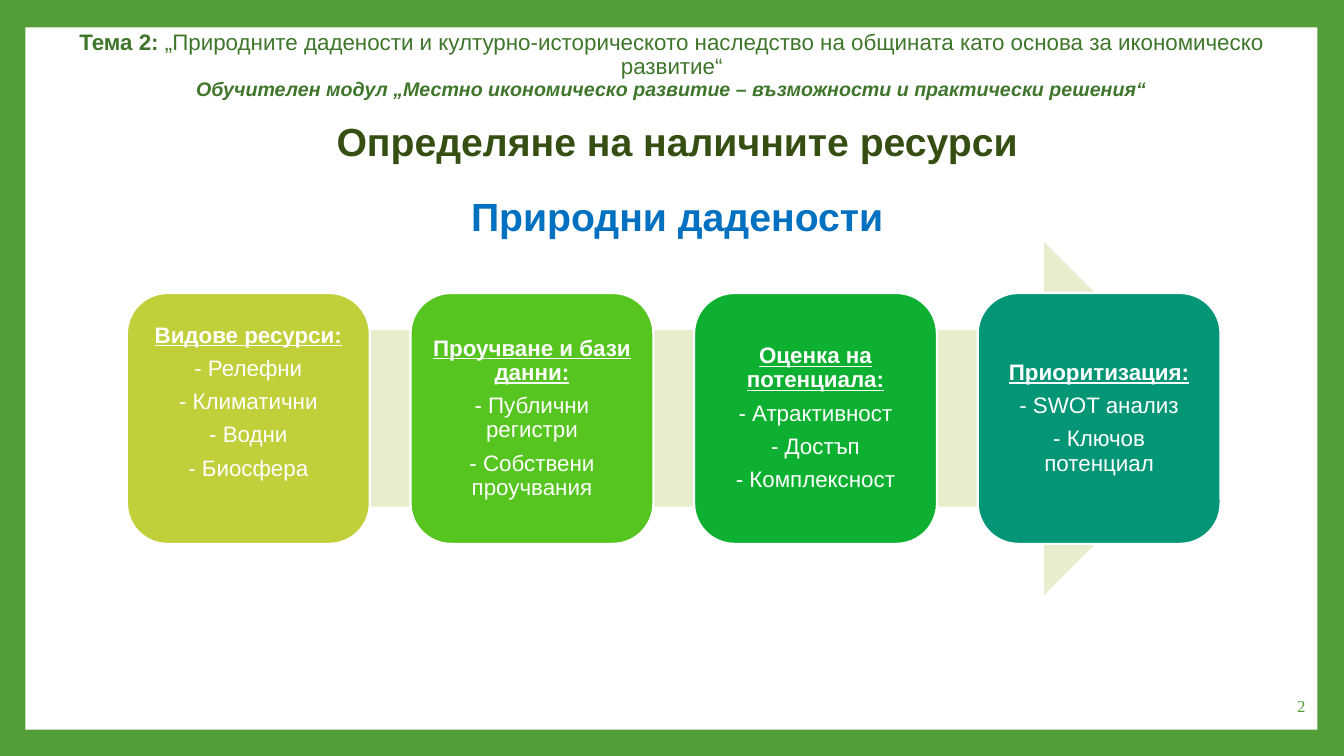
from dataclasses import dataclass
from lxml.etree import SubElement
from pptx import Presentation
from pptx.dml.color import RGBColor
from pptx.enum.shapes import MSO_SHAPE as Shape
from pptx.enum.text import MSO_ANCHOR as Anchor, MSO_AUTO_SIZE as AutoSize, PP_ALIGN as Align
from pptx.oxml.ns import qn
from pptx.util import Cm, Pt


@dataclass(frozen=True)
class Theme:
    frame: str = "549E39"
    paper: str = "FFFFFF"
    arrow: str = "E8EDCE"
    topic: str = "3F762B"
    heading: str = "354F12"
    subheading: str = "0070C0"
    stages: tuple = ("C0CF3A", "57C51F", "0EB032", "029676")
    font: str = "Arial"
    number_font: str = "Times New Roman"
    heading_size: int = 28
    text_size: int = 16
    module_size: int = 14
    number_size: int = 12


THEME = Theme()

STAGES = [
    ("Видове ресурси:", ["Релефни", "Климатични", "Водни", "Биосфера"]),
    ("Проучване и бази данни:", ["Публични регистри", "Собствени проучвания"]),
    ("Оценка на потенциала:", ["Атрактивност", "Достъп", "Комплексност"]),
    ("Приоритизация:", ["SWOT анализ", "Ключов потенциал"]),
]


def apply_format(target, **values):
    for name, value in values.items():
        setattr(target, name, value)


def place(part, box):
    lengths = map(Cm, box)
    apply_format(part, **dict(zip(("left", "top", "width", "height"), lengths)))


def add_run(paragraph, text, color, size, name=THEME.font, **style):
    run = paragraph.add_run()
    run.text = text
    apply_format(run.font, name=name, size=Pt(size), **style)
    run.font.color.rgb = RGBColor.from_string(color)


def next_paragraph(frame, **layout):
    """Return the unused first paragraph of a frame, or a new one."""
    first = frame.paragraphs[0]
    paragraph = first if not first.runs else frame.add_paragraph()
    apply_format(paragraph, **layout)
    return paragraph


def add_filled(slide, kind, box, color):
    shape = slide.shapes.add_shape(kind, *map(Cm, box))
    shape.shadow.inherit = False
    shape.fill.solid()
    shape.fill.fore_color.rgb = RGBColor.from_string(color)
    shape.line.fill.background()
    return shape


def add_backdrop(slide, box):
    """Green page with a white panel behind everything else."""
    fill = slide.background.fill
    fill.solid()
    fill.fore_color.rgb = RGBColor.from_string(THEME.frame)
    panel = add_filled(slide, Shape.RECTANGLE, box, THEME.paper)
    slide.shapes._spTree.insert(2, panel._element)


def fill_topic(title, box):
    place(title, box)
    frame = title.text_frame
    apply_format(frame, vertical_anchor=Anchor.MIDDLE, auto_size=AutoSize.NONE, word_wrap=True)
    layout = dict(alignment=Align.CENTER, line_spacing=0.9, space_before=Pt(0))
    topic = next_paragraph(frame, **layout)
    add_run(topic, "Тема 2: ", THEME.topic, THEME.text_size, bold=True)
    add_run(topic, "„Природните дадености и културно-историческото наследство на общината "
            "като основа за икономическо развитие“", THEME.topic, THEME.text_size, bold=False)
    add_run(next_paragraph(frame, **layout),
            "Обучителен модул „Местно икономическо развитие – възможности и практически решения“",
            THEME.topic, THEME.module_size, bold=True, italic=True)


def fill_headings(body, box):
    place(body, box)
    frame = body.text_frame
    apply_format(frame, vertical_anchor=Anchor.TOP, auto_size=AutoSize.NONE, word_wrap=True)
    headings = [("Определяне на наличните ресурси", THEME.heading, 0),
                ("Природни дадености", THEME.subheading, 20)]
    for text, color, gap in headings:
        heading = next_paragraph(frame, alignment=Align.CENTER, space_before=Pt(gap))
        properties = heading._p.get_or_add_pPr()
        properties.set("marL", str(Cm(0.13)))
        properties.set("indent", "0")
        SubElement(properties, qn("a:buNone"))
        add_run(heading, text, color, THEME.heading_size, bold=True)


def add_stage(slide, box, color, heading, items, lift=0):
    """Rounded card; lift is extra room kept free below its text."""
    card = add_filled(slide, Shape.ROUNDED_RECTANGLE, box, color)
    card.line.color.rgb = RGBColor.from_string(THEME.paper)
    card.line.width = Pt(1.5)
    frame = card.text_frame
    inset = Cm(0.18)
    apply_format(frame, word_wrap=True, vertical_anchor=Anchor.MIDDLE, margin_left=inset,
                 margin_right=inset, margin_top=inset, margin_bottom=inset + Cm(lift))
    lines = [(heading, True)] + [(f"- {item}", False) for item in items]
    for text, strong in lines:
        paragraph = next_paragraph(frame, alignment=Align.CENTER, line_spacing=0.9,
                                   space_after=Pt(6.5))
        add_run(paragraph, text, THEME.paper, THEME.text_size, bold=strong, underline=strong)


def add_process(slide, box):
    """Arrow filling the box, with the stages spread evenly along it."""
    left, top, width, height = box
    add_filled(slide, Shape.RIGHT_ARROW, box, THEME.arrow)
    card_width, card_height = 6.12, 6.32
    step = (width - card_width) / (len(STAGES) - 1)
    card_top = top + (height - card_height) / 2
    for index, ((heading, items), color) in enumerate(zip(STAGES, THEME.stages)):
        card_box = (left + index * step, card_top, card_width, card_height)
        add_stage(slide, card_box, color, heading, items, lift=0 if index else 0.81)


def add_page_number(slide, box):
    frame = slide.shapes.add_textbox(*map(Cm, box)).text_frame
    apply_format(frame, word_wrap=True, vertical_anchor=Anchor.MIDDLE)
    add_run(next_paragraph(frame, alignment=Align.RIGHT), "2", THEME.frame,
            THEME.number_size, name=THEME.number_font)


def main():
    deck = Presentation()
    apply_format(deck, slide_width=Cm(33.87), slide_height=Cm(19.05))
    slide = deck.slides.add_slide(deck.slide_layouts[1])
    add_backdrop(slide, (0.64, 0.69, 32.56, 17.7))
    fill_topic(slide.shapes.title, (0.94, 0.79, 31.98, 1.73))
    fill_headings(slide.placeholders[1], (3.5, 2.82, 27, 3.3))
    add_process(slide, (3.2, 6.1, 27.56, 8.89))
    add_page_number(slide, (28.4, 17.27, 4.75, 1.02))
    deck.save("out.pptx")


if __name__ == "__main__":
    main()
